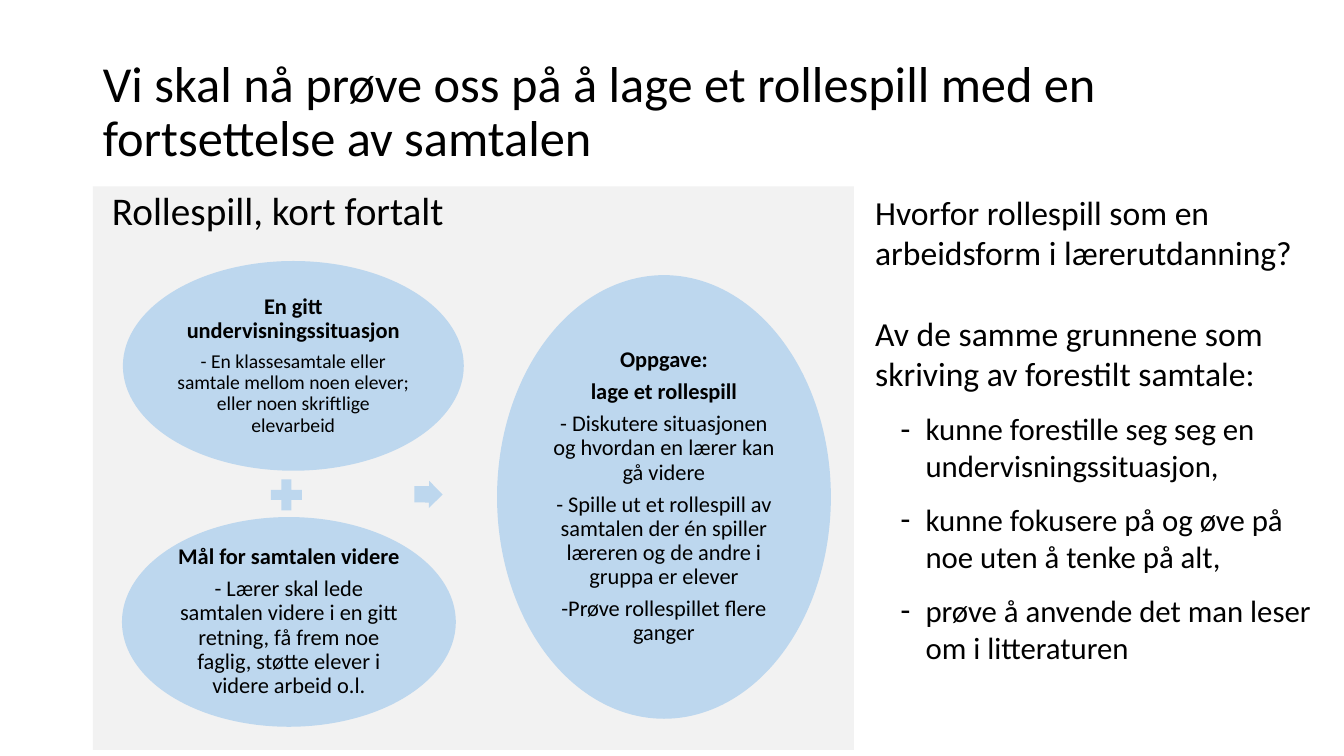
import pptx
import pptx.util
import pptx.dml.color
import pptx.enum.shapes
import pptx.enum.text
import pptx.oxml.ns
from dataclasses import dataclass
from lxml import etree

PX = 9144
SHAPE = pptx.enum.shapes.MSO_SHAPE
ALIGN = pptx.enum.text.PP_ALIGN
ANCHOR = pptx.enum.text.MSO_ANCHOR
NO_FIT = pptx.enum.text.MSO_AUTO_SIZE.NONE


@dataclass(frozen=True)
class Theme:
    font: str = "Calibri"
    ink: str = "000000"
    panel: str = "F2F2F2"
    bubble: str = "BDD7EE"
    title: int = 36
    heading: int = 28
    lead: int = 24
    reason: int = 22
    strong: int = 16
    small: int = 14


THEME = Theme()


def rgb(value):
    return pptx.dml.color.RGBColor.from_string(value)


def px(*lengths):
    return [pptx.util.Emu(length * PX) for length in lengths]


def apply_format(target, values):
    for name, value in values.items():
        setattr(target, name, value)


def place(part, box):
    apply_format(part, dict(zip(("left", "top", "width", "height"), px(*box))))


def set_bullet(paragraph, mark=None, margin=0, hanging=0):
    properties = paragraph._p.get_or_add_pPr()
    properties.set("marL", str(margin * PX))
    properties.set("indent", str(-hanging * PX))
    tag = "a:buChar" if mark else "a:buNone"
    bullet = etree.SubElement(properties, pptx.oxml.ns.qn(tag))
    if mark:
        bullet.set("char", mark)


def write(frame, entries, frame_format, paragraph_format):
    apply_format(frame, {"word_wrap": True, "auto_size": NO_FIT, **frame_format})
    for index, (wording, size, bold, extra) in enumerate(entries):
        paragraph = frame.paragraphs[0] if index == 0 else frame.add_paragraph()
        spacing = {"space_before": pptx.util.Pt(0), "space_after": pptx.util.Pt(0)}
        apply_format(paragraph, {**spacing, **paragraph_format, **extra})
        run = paragraph.add_run()
        run.text = wording
        apply_format(run.font, {"name": THEME.font, "size": pptx.util.Pt(size), "bold": bold})
        run.font.color.rgb = rgb(THEME.ink)
        if paragraph.level:
            set_bullet(paragraph, "-", 50, 25)
        else:
            set_bullet(paragraph)


def add_symbol(slide, kind, box):
    symbol = slide.shapes.add_shape(kind, *px(*box))
    symbol.shadow.inherit = False
    symbol.fill.solid()
    symbol.fill.fore_color.rgb = rgb(THEME.bubble)
    symbol.line.fill.background()
    return symbol


def add_bubble(slide, box, headings, details, detail_size):
    bubble = add_symbol(slide, SHAPE.OVAL, box)
    bubble.line.color.rgb = rgb(THEME.bubble)
    bubble.line.width = pptx.util.Pt(1.5)
    entries = [(heading, THEME.strong, True, {}) for heading in headings]
    entries += [(detail, detail_size, False, {}) for detail in details]
    margins = ("margin_left", "margin_top", "margin_right", "margin_bottom")
    write(bubble.text_frame, entries,
          {"vertical_anchor": ANCHOR.MIDDLE, **dict.fromkeys(margins, px(2)[0])},
          {"alignment": ALIGN.CENTER, "line_spacing": 0.9, "space_after": pptx.util.Pt(5.6)})


def add_title(title):
    place(title, (92, 40, 1150, 145))
    wording = "Vi skal nå prøve oss på å lage et rollespill med en fortsettelse av samtalen"
    write(title.text_frame, [(wording, THEME.title, False, {})],
          {"vertical_anchor": ANCHOR.MIDDLE},
          {"alignment": ALIGN.LEFT, "line_spacing": 0.9})


def add_panel(panel):
    place(panel, (92, 185, 755, 559))
    panel.fill.solid()
    panel.fill.fore_color.rgb = rgb(THEME.panel)
    write(panel.text_frame, [("Rollespill, kort fortalt", THEME.heading, False, {})],
          {"vertical_anchor": ANCHOR.TOP, "margin_left": px(19)[0]},
          {"line_spacing": 0.9})


def add_reasons(reasons):
    place(reasons, (858, 185, 475, 485))
    bullet = {"level": 1, "space_before": pptx.util.Pt(12)}
    entries = [
        ("Hvorfor rollespill som en arbeidsform i lærerutdanning?", THEME.lead, False, {}),
        ("Av de samme grunnene som skriving av forestilt samtale:", THEME.lead, False,
         {"space_before": pptx.util.Pt(29)}),
    ]
    entries += [(wording, THEME.reason, False, bullet) for wording in (
        "kunne forestille seg seg en undervisningssituasjon,",
        "kunne fokusere på og øve på noe uten å tenke på alt,",
        "prøve å anvende det man leser om i litteraturen",
    )]
    write(reasons.text_frame, entries, {"vertical_anchor": ANCHOR.TOP}, {"line_spacing": 1.0})


def main():
    deck = pptx.Presentation()
    deck.slide_width, deck.slide_height = px(1333, 750)
    slide = deck.slides.add_slide(deck.slide_layouts[3])
    title, panel, reasons = slide.placeholders
    add_title(title)
    add_panel(panel)
    add_reasons(reasons)

    add_bubble(slide, (123, 260, 336, 206), ["En gitt undervisningssituasjon"],
               ["- En klassesamtale eller samtale mellom noen elever; "
                "eller noen skriftlige elevarbeid"], THEME.small)
    add_symbol(slide, SHAPE.MATH_PLUS, (263, 470, 42, 42))
    add_bubble(slide, (122, 514, 329, 206), ["Mål for samtalen videre"],
               ["- Lærer skal lede samtalen videre i en gitt retning, få frem noe "
                "faglig, støtte elever i videre arbeid o.l."], THEME.strong)
    arrow = add_symbol(slide, SHAPE.RIGHT_ARROW, (411, 477, 28, 27))
    arrow.rotation = 0.5
    arrow.adjustments[0] = 0.6
    add_bubble(slide, (494, 274, 329, 438), ["Oppgave:", "lage et rollespill"],
               ["- Diskutere situasjonen og hvordan en lærer kan gå videre",
                "- Spille ut et rollespill av samtalen der én spiller læreren "
                "og de andre i gruppa er elever",
                "-Prøve rollespillet flere ganger"], THEME.strong)
    deck.save("out.pptx")


if __name__ == "__main__":
    main()
